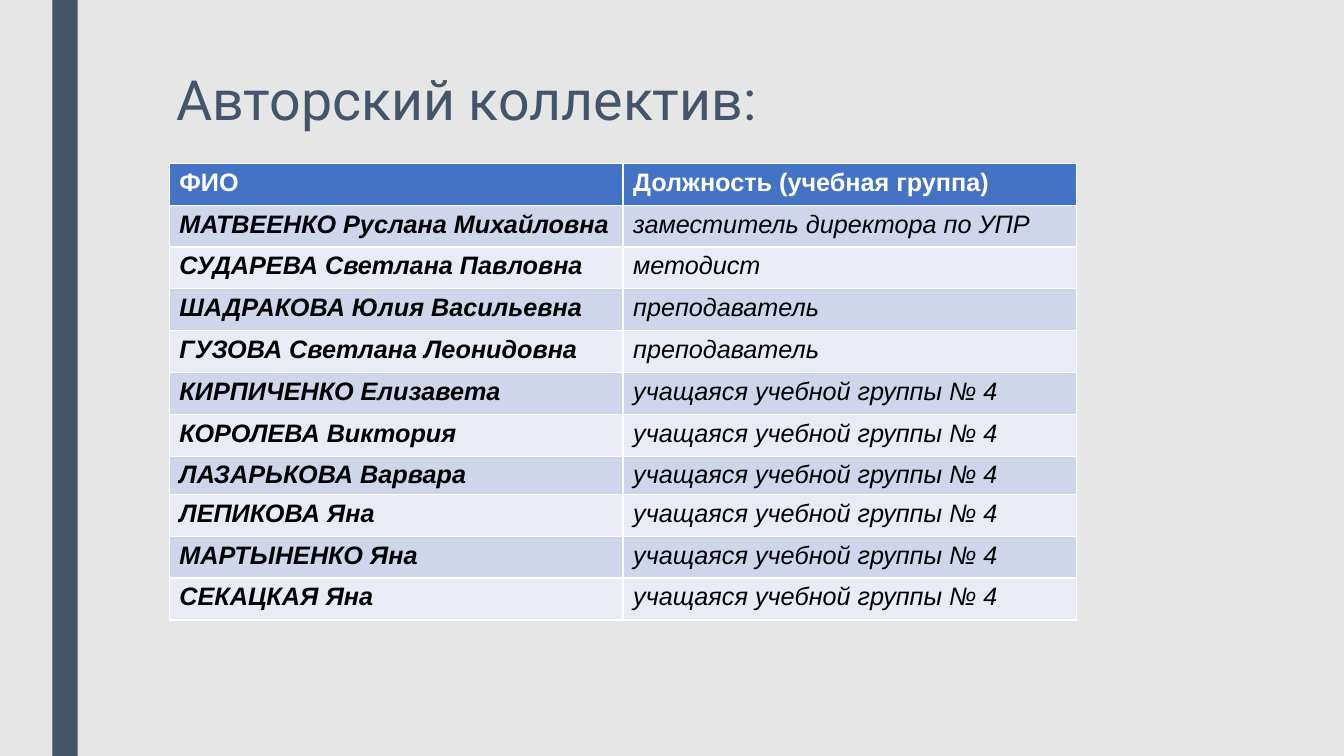
"""Build the slide that lists the project authors and their posts."""
from pptx import Presentation
from pptx.dml.color import RGBColor
from pptx.enum.shapes import MSO_SHAPE
from pptx.enum.text import MSO_ANCHOR, PP_ALIGN
from pptx.util import Inches, Pt

SLATE = RGBColor(0x44, 0x54, 0x6A)
GREY = RGBColor(0xE7, 0xE6, 0xE6)
BLUE = RGBColor(0x44, 0x72, 0xC4)
DARK = RGBColor(0xCF, 0xD5, 0xEA)
LIGHT = RGBColor(0xE9, 0xEB, 0xF5)
WHITE = RGBColor(0xFF, 0xFF, 0xFF)
BLACK = RGBColor(0x00, 0x00, 0x00)

PUPIL = "учащаяся учебной группы № 4"
TEACHER = "преподаватель"
ROWS = [
    ("ФИО", "Должность (учебная группа)"),
    ("МАТВЕЕНКО Руслана Михайловна", "заместитель директора по УПР"),
    ("СУДАРЕВА Светлана Павловна", "методист"),
    ("ШАДРАКОВА Юлия Васильевна", TEACHER),
    ("ГУЗОВА Светлана Леонидовна", TEACHER),
    ("КИРПИЧЕНКО Елизавета", PUPIL),
    ("КОРОЛЕВА Виктория", PUPIL),
    ("ЛАЗАРЬКОВА Варвара", PUPIL),
    ("ЛЕПИКОВА Яна", PUPIL),
    ("МАРТЫНЕНКО Яна", PUPIL),
    ("СЕКАЦКАЯ Яна", PUPIL),
]


def write(frame, text, face="Arial", size=18, color=BLACK, bold=False, italic=False):
    frame.text = text
    line = frame.paragraphs[0]
    line.alignment = PP_ALIGN.LEFT
    font = line.runs[0].font
    font.name, font.size = face, Pt(size)
    font.bold, font.italic = bold, italic
    font.color.rgb = color
    return line


deck = Presentation()
deck.slide_width, deck.slide_height = Inches(13.33), Inches(7.5)
slide = deck.slides.add_slide(deck.slide_layouts[5])
slide.background.fill.solid()
slide.background.fill.fore_color.rgb = GREY

stripe = slide.shapes.add_shape(
    MSO_SHAPE.RECTANGLE, Inches(0.52), Inches(0), Inches(0.25), Inches(7.5))
stripe.shadow.inherit = False
stripe.fill.solid()
stripe.fill.fore_color.rgb = SLATE
stripe.line.fill.background()

title = slide.shapes.title
title.left, title.top = Inches(1.65), Inches(0.65)
title.width, title.height = Inches(9.91), Inches(0.73)
title.text_frame.vertical_anchor = MSO_ANCHOR.MIDDLE
head = write(title.text_frame, "Авторский коллектив:", face="Roboto", size=39.6, color=SLATE)
head.line_spacing = 0.89

table = slide.shapes.add_table(
    len(ROWS), 2, Inches(1.68), Inches(1.62), Inches(9), Inches(4.56)).table
for r, row in enumerate(ROWS):
    table.rows[r].height = Inches(0.38 if r == 7 else 0.415)
    top = r == 0
    for c, text in enumerate(row):
        cell = table.cell(r, c)
        cell.fill.solid()
        cell.fill.fore_color.rgb = BLUE if top else DARK if r % 2 else LIGHT
        write(cell.text_frame, text, color=WHITE if top else BLACK,
              bold=top or c == 0, italic=not top)

deck.save("out.pptx")
